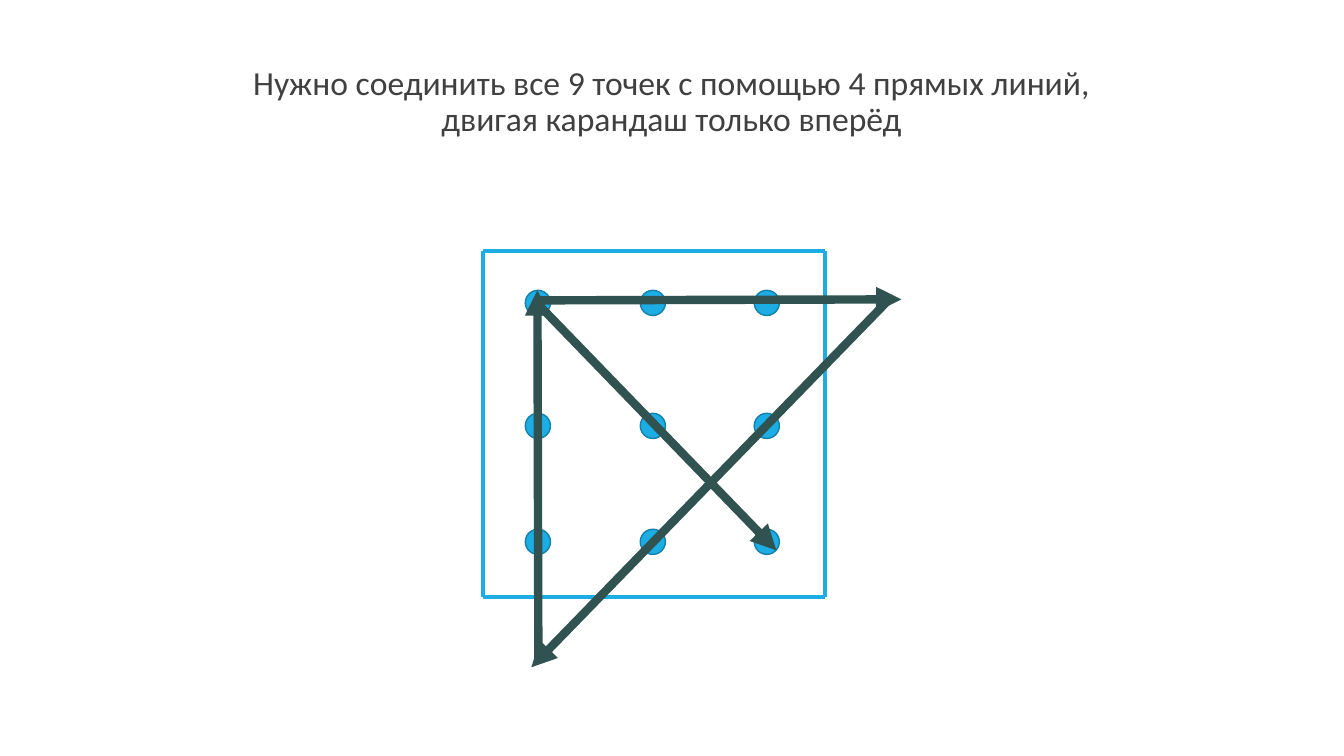
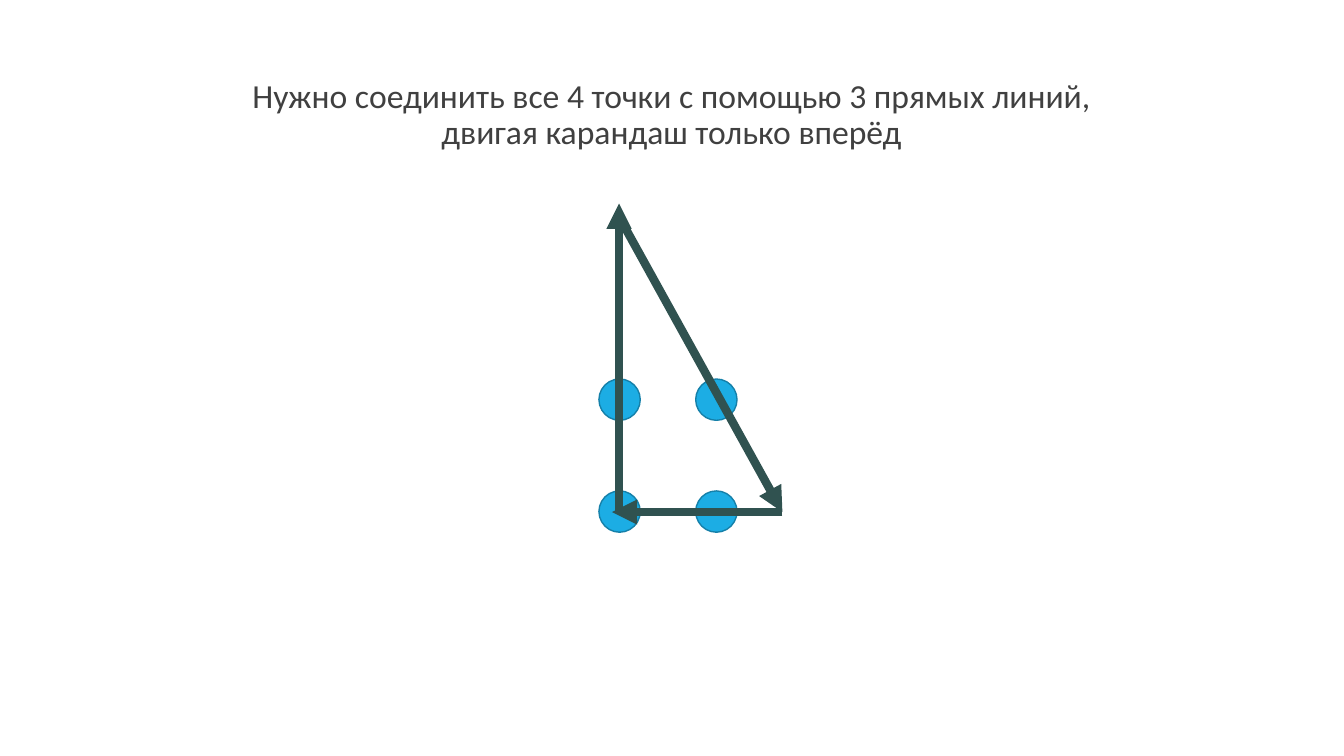
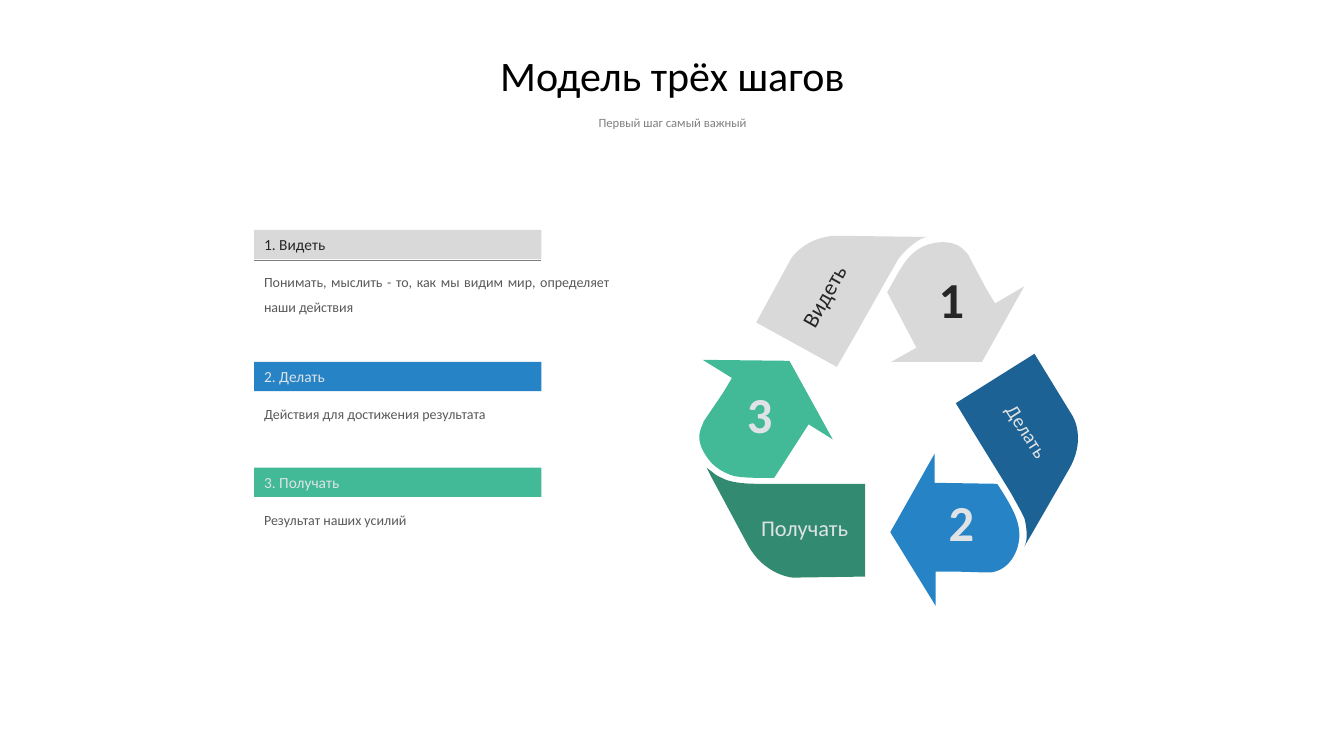
from dataclasses import dataclass
from itertools import product

from lxml.etree import SubElement
from pptx import Presentation
from pptx.dml.color import RGBColor
from pptx.enum.shapes import MSO_CONNECTOR, MSO_SHAPE
from pptx.enum.text import MSO_ANCHOR, MSO_AUTO_SIZE, PP_ALIGN
from pptx.oxml.ns import qn
from pptx.util import Inches, Pt

COLORS = {
    "black": "000000", "puzzle_text": "404040", "subtitle": "808080",
    "detail": "595959", "dark_text": "262626", "light_text": "DFE3E5",
    "dot": "1CADE4", "dot_edge": "1580A9", "pencil": "305250",
    "gray": "D9D9D9", "rule": "7F7F7F", "blue": "2683C6",
    "deep_blue": "1D6294", "green": "42BA97", "deep_green": "328B71",
}
FONT = "Calibri"
Point = tuple[float, float]
Box = tuple[float, float, float, float]


@dataclass(frozen=True)
class TextStyle:
    size: float
    color: str
    bold: bool = False
    align: PP_ALIGN = PP_ALIGN.CENTER
    spacing: float = 1.0
    before: float = 0


@dataclass(frozen=True)
class Puzzle:
    task: str
    task_box: Box
    columns: tuple[float, ...]
    rows: tuple[float, ...]
    dot_size: float
    strokes: tuple[tuple[Point, Point], ...]
    frame: tuple[Point, ...] = ()


@dataclass(frozen=True)
class Outline:
    """A start point, then line ends (x, y) or cubic curves (six numbers)."""
    start: Point
    segments: tuple[tuple[float, ...], ...]


@dataclass(frozen=True)
class Step:
    number: str
    name: str
    detail: str
    bar_top: float
    detail_height: float
    arrow_color: str
    band_color: str
    text_color: str
    number_at: Point
    label_box: Box
    label_size: float
    rotation: float
    arrow: Outline
    band: Outline


TASK = TextStyle(24, "puzzle_text", spacing=0.9, before=10)
TITLE = TextStyle(30, "black", spacing=0.9)
SUBTITLE = TextStyle(9, "subtitle", spacing=0.9, before=10)
DETAIL = TextStyle(10, "detail", align=PP_ALIGN.JUSTIFY, spacing=1.5)

PUZZLES = (
    Puzzle(
        "Нужно соединить все 9 точек с помощью 4 прямых линий, "
        "двигая карандаш только вперёд",
        (2.35, 0.61, 8.62, 0.9),
        (5.21, 6.35, 7.48), (2.88, 4.1, 5.25), 0.25,
        (((5.31, 2.98), (8.94, 2.97)), ((8.82, 2.97), (5.27, 6.62)),
         ((5.3, 2.98), (7.7, 5.46)), ((5.34, 6.57), (5.33, 2.88))),
        ((4.79, 2.49), (8.18, 2.49), (8.18, 5.92), (4.79, 5.92)),
    ),
    Puzzle(
        "Нужно соединить все 4 точки с помощью 3 прямых линий, "
        "двигая карандаш только вперёд",
        (2.35, 0.74, 8.62, 0.76),
        (5.94, 6.9), (3.76, 4.87), 0.41,
        (((6.14, 5.08), (6.14, 2.02)), ((6.14, 2.15), (7.76, 5.08)),
         ((7.76, 5.08), (6.07, 5.08))),
    ),
)

STEPS = (
    Step(
        "1", "Видеть",
        "Понимать, мыслить - то, как мы видим мир, определяет наши действия",
        2.28, 0.57, "gray", "gray", "dark_text",
        (9.21, 2.61), (7.69, 2.75, 0.96, 0.37), 16, 299.2,
        Outline((9.87, 3.01), (
            (9.78, 2.86), (9.62, 2.56), (9.61, 2.53, 9.59, 2.51, 9.57, 2.49),
            (9.5, 2.41, 9.39, 2.39, 9.27, 2.41),
            (9.03, 2.45, 8.94, 2.65, 8.84, 2.83), (8.8, 2.9),
            (9.09, 3.45), (8.84, 3.59), (9.74, 3.59), (10.16, 2.84))),
        Outline((8.91, 2.57), (
            (8.96, 2.51), (9.02, 2.45, 9.13, 2.35, 9.21, 2.35),
            (9.09, 2.35), (8.34, 2.34), (8.11, 2.33, 7.94, 2.44, 7.85, 2.56),
            (7.5, 3.2), (8.3, 3.64), (8.48, 3.33), (8.79, 2.78))),
    ),
    Step(
        "2", "Делать", "Действия для достижения результата",
        3.59, 0.32, "blue", "deep_blue", "light_text",
        (9.31, 4.82), (9.76, 4.11, 0.85, 0.34), 14, 57.1,
        Outline((9.28, 5.67), (
            (9.45, 5.67), (9.79, 5.68), (9.82, 5.68, 9.84, 5.68, 9.87, 5.67),
            (9.98, 5.64, 10.05, 5.55, 10.09, 5.44),
            (10.16, 5.22, 10.04, 5.04, 9.93, 4.86), (9.89, 4.8),
            (9.27, 4.79), (9.27, 4.5), (8.83, 5.28), (9.28, 6.01))),
        Outline((10.12, 5.06), (
            (10.16, 5.14), (10.18, 5.22, 10.2, 5.35, 10.16, 5.42),
            (10.22, 5.32), (10.6, 4.66),
            (10.72, 4.46, 10.71, 4.26, 10.64, 4.13),
            (10.26, 3.51), (9.48, 4), (9.68, 4.33), (10.02, 4.88))),
    ),
    Step(
        "3", "Получать", "Результат наших усилий",
        4.64, 0.33, "green", "deep_green", "light_text",
        (7.31, 3.75), (7.39, 5.05, 1.18, 0.37), 16, 0,
        Outline((7.26, 3.75), (
            (7.17, 3.9), (6.98, 4.18), (6.97, 4.21, 6.96, 4.23, 6.95, 4.26),
            (6.91, 4.36, 6.96, 4.47, 7.03, 4.56),
            (7.09, 4.64, 7.18, 4.69, 7.27, 4.72),
            (7.39, 4.75, 7.67, 4.74, 7.68, 4.74),
            (8.02, 4.21), (8.26, 4.36), (7.83, 3.58), (6.97, 3.57))),
        Outline((7.01, 4.64), (
            (7.06, 4.74), (7.42, 5.41), (7.53, 5.61, 7.71, 5.71, 7.86, 5.73),
            (8.58, 5.72), (8.58, 4.8), (7.58, 4.8),
            (7.45, 4.8, 7.32, 4.8, 7.2, 4.76),
            (7.16, 4.74, 7.13, 4.73, 7.1, 4.71))),
    ),
)


# Shared drawing functions
def rgb(color: str) -> RGBColor:
    return RGBColor.from_string(COLORS[color])


def inches(values: tuple[float, ...]) -> list[int]:
    return [Inches(value) for value in values]


def write(frame, text: str, style: TextStyle) -> None:
    paragraph = frame.paragraphs[0]
    paragraph.alignment = style.align
    paragraph.line_spacing = style.spacing
    paragraph.space_before = Pt(style.before)
    run = paragraph.add_run()
    run.text = text
    run.font.name = FONT
    run.font.size = Pt(style.size)
    run.font.bold = style.bold
    run.font.color.rgb = rgb(style.color)


def fill_placeholder(holder, box: Box, text: str, style: TextStyle,
                     anchor: MSO_ANCHOR = MSO_ANCHOR.TOP) -> None:
    holder.left, holder.top, holder.width, holder.height = inches(box)
    frame = holder.text_frame
    frame.auto_size = MSO_AUTO_SIZE.NONE
    frame.vertical_anchor = anchor
    write(frame, text, style)
    # Plain paragraph without the template's bullet
    properties = frame.paragraphs[0]._p.get_or_add_pPr()
    properties.set("marL", "0")
    properties.set("indent", "0")
    SubElement(properties, qn("a:buNone"))


def add_text(slide, box: Box, text: str, style: TextStyle,
             wrap: bool = True, rotation: float = 0) -> None:
    label = slide.shapes.add_textbox(*inches(box))
    label.rotation = rotation
    label.text_frame.word_wrap = wrap
    label.text_frame.auto_size = MSO_AUTO_SIZE.SHAPE_TO_FIT_TEXT
    write(label.text_frame, text, style)


def paint(shape, fill: str, edge: str | None = None) -> None:
    shape.shadow.inherit = False
    shape.fill.solid()
    shape.fill.fore_color.rgb = rgb(fill)
    if edge:
        shape.line.color.rgb = rgb(edge)
        shape.line.width = Pt(1)
    else:
        shape.line.fill.background()


def add_line(slide, start: Point, end: Point, color: str, width: float,
             arrow: bool = False) -> None:
    line = slide.shapes.add_connector(
        MSO_CONNECTOR.STRAIGHT, *inches(start + end))
    line.line.color.rgb = rgb(color)
    line.line.width = Pt(width)
    if arrow:
        SubElement(line.line._get_or_add_ln(), qn("a:tailEnd"), type="triangle")
    SubElement(line._element.spPr, qn("a:effectLst"))


def curve_points(start: Point, curve: tuple[float, ...],
                 count: int = 12) -> list[Point]:
    x1, y1, x2, y2, x3, y3 = curve

    def at(t: float, a: float, b: float, c: float, d: float) -> float:
        u = 1 - t
        return u**3 * a + 3 * u * u * t * b + 3 * u * t * t * c + t**3 * d

    return [(at(i / count, start[0], x1, x2, x3),
             at(i / count, start[1], y1, y2, y3))
            for i in range(1, count + 1)]


def add_outline(slide, outline: Outline, color: str) -> None:
    points = [outline.start]
    for segment in outline.segments:
        points += ([segment] if len(segment) == 2
                   else curve_points(points[-1], segment))
    builder = slide.shapes.build_freeform(*inches(outline.start), scale=1.0)
    builder.add_line_segments([inches(point) for point in points[1:]], close=True)
    paint(builder.convert_to_shape(), color)


# Slides
def add_puzzle(deck, puzzle: Puzzle) -> None:
    slide = deck.slides.add_slide(deck.slide_layouts[1])
    unused_title = slide.shapes.title._element
    unused_title.getparent().remove(unused_title)
    fill_placeholder(slide.placeholders[1], puzzle.task_box, puzzle.task, TASK)

    corners = puzzle.frame
    for start, end in zip(corners, corners[1:] + corners[:1]):
        add_line(slide, start, end, "dot", 3)
    for top, left in product(puzzle.rows, puzzle.columns):
        dot = slide.shapes.add_shape(
            MSO_SHAPE.FLOWCHART_CONNECTOR,
            *inches((left, top, puzzle.dot_size, puzzle.dot_size)))
        paint(dot, "dot", "dot_edge")
    for start, end in puzzle.strokes:
        add_line(slide, start, end, "pencil", 6, arrow=True)


def add_step(slide, step: Step) -> None:
    # Cycle part
    add_outline(slide, step.arrow, step.arrow_color)
    add_outline(slide, step.band, step.band_color)
    add_text(slide, step.label_box, step.name,
             TextStyle(step.label_size, step.text_color),
             wrap=False, rotation=step.rotation)
    add_text(slide, step.number_at + (0.45, 0.71), step.number,
             TextStyle(36, step.text_color, bold=True, align=PP_ALIGN.LEFT))

    # Heading bar and explanation
    bar = slide.shapes.add_shape(
        MSO_SHAPE.RECTANGLE, *inches((2.52, step.bar_top, 2.85, 0.29)))
    paint(bar, step.arrow_color)
    bar.text_frame.word_wrap = True
    write(bar.text_frame, f"{step.number}. {step.name}",
          TextStyle(11, step.text_color, align=PP_ALIGN.LEFT))
    add_text(slide, (2.52, step.bar_top + 0.3, 3.62, step.detail_height),
             step.detail, DETAIL)


def add_model(deck) -> None:
    slide = deck.slides.add_slide(deck.slide_layouts[1])
    fill_placeholder(slide.shapes.title, (0.92, 0.39, 11.5, 0.76),
                     "Модель трёх шагов", TITLE, MSO_ANCHOR.MIDDLE)
    fill_placeholder(slide.placeholders[1], (0.92, 1.11, 11.5, 0.33),
                     "Первый шаг самый важный", SUBTITLE)
    for step in STEPS:
        add_step(slide, step)
    add_line(slide, (2.52, 2.58), (5.37, 2.58), "rule", 0.75)


def main() -> None:
    deck = Presentation()
    deck.slide_width, deck.slide_height = inches((13.33, 7.5))
    for puzzle in PUZZLES:
        add_puzzle(deck, puzzle)
    add_model(deck)
    deck.save("out.pptx")


if __name__ == "__main__":
    main()
